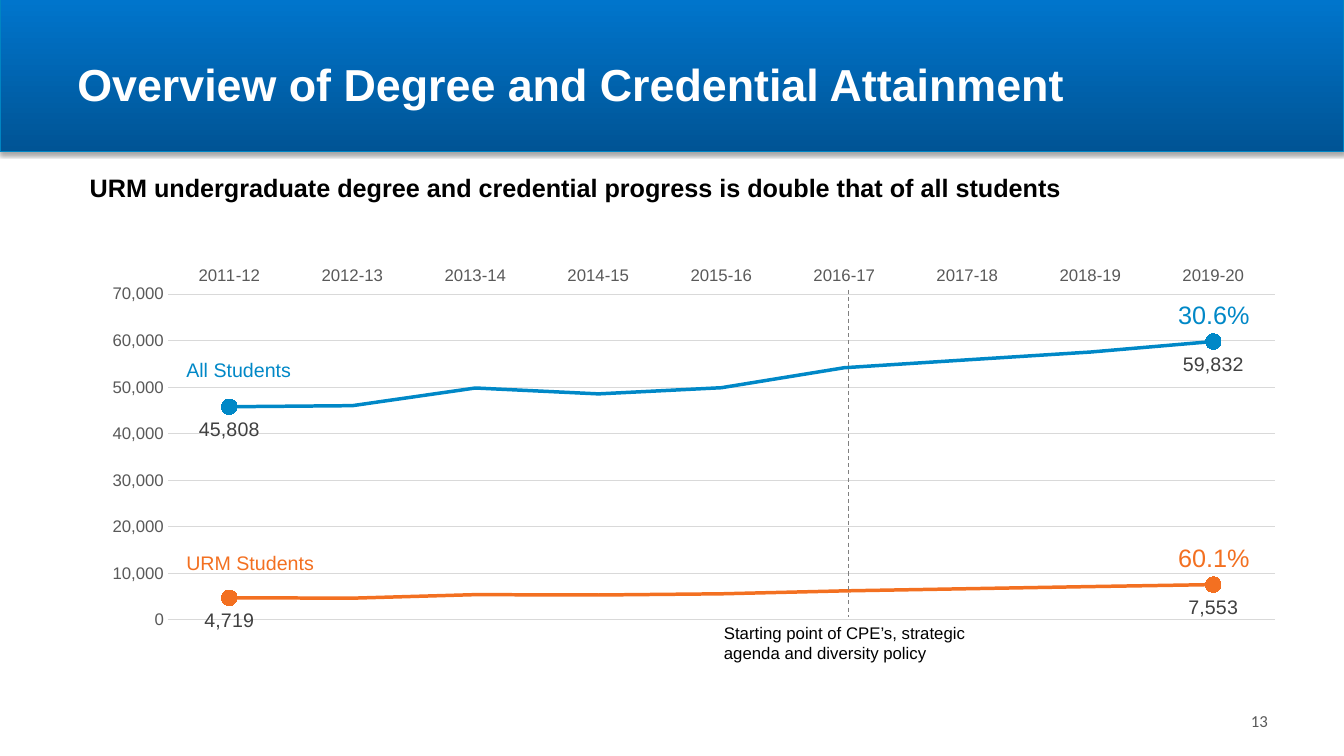
import lxml.etree
import pptx
import pptx.chart.data
import pptx.dml.color
import pptx.enum.chart
import pptx.enum.dml
import pptx.enum.shapes
import pptx.enum.text
import pptx.oxml
import pptx.oxml.ns
import pptx.util

PX = 9525  # EMU in one px, 96 px to the inch
THEME = {
    "font": "Arial", "number_font": "Calibri",
    "band_top": "0075CC", "band_bottom": "005495",
    "all": "0088C7", "urm": "F37021", "band_line": "0085C3",
    "white": "FFFFFF", "black": "000000", "axis": "595959",
    "label": "404040", "grid": "D9D9D9", "marker_line": "808080",
    "title": 32, "large": 18, "medium": 14, "small": 12, "chart": 10,
}
ALIGN = pptx.enum.text.PP_ALIGN
ANCHOR = pptx.enum.text.MSO_ANCHOR


def color(name):
    return pptx.dml.color.RGBColor.from_string(THEME[name])


def write(sp, box, text, size, ink, bold=False, align=ALIGN.LEFT,
          anchor=ANCHOR.TOP, font="font"):
    """Place a text shape and give it one formatted paragraph."""
    sp.left, sp.top, sp.width, sp.height = [v * PX for v in box]
    tf = sp.text_frame
    tf.word_wrap = True
    tf.auto_size = pptx.enum.text.MSO_AUTO_SIZE.NONE
    tf.vertical_anchor = anchor
    p = tf.paragraphs[0]
    p.text = text
    p.alignment = align
    p.font.name = THEME[font]
    p.font.size = pptx.util.Pt(THEME[size])
    p.font.bold = bold
    p.font.color.rgb = color(ink)


prs = pptx.Presentation()
prs.slide_width, prs.slide_height = 1280 * PX, 720 * PX
s = prs.slides.add_slide(prs.slide_layouts[5])

# Header band, behind the title
band = s.shapes.add_shape(pptx.enum.shapes.MSO_SHAPE.RECTANGLE,
                          0, 0, 1280 * PX, 144 * PX)
band.fill.gradient()
band.fill.gradient_angle = 90
for stop, name in zip(band.fill.gradient_stops, ("band_bottom", "band_top")):
    stop.color.rgb = color(name)
band.fill.gradient_stops[0].position = 0
band.fill.gradient_stops[1].position = 1
band.line.color.rgb = color("band_line")
band.line.width = pptx.util.Pt(0.75)
band.shadow.inherit = False
effects = band.element.spPr.find(pptx.oxml.ns.qn("a:effectLst"))
effects.append(pptx.oxml.parse_xml(
    f'<a:outerShdw {pptx.oxml.ns.nsdecls("a")} blurRad="39370" dist="22860" '
    'dir="5400000" rotWithShape="0"><a:srgbClr val="000000">'
    '<a:alpha val="35000"/></a:srgbClr></a:outerShdw>'))
s.shapes.title.element.addprevious(band.element)
write(s.shapes.title, (64, 16, 1152, 128),
      "Overview of Degree and Credential Attainment", "title", "white",
      bold=True, anchor=ANCHOR.MIDDLE)

# Line chart
data = pptx.chart.data.CategoryChartData(number_format="#,##0")
data.categories = [f"{year}-{year - 1999}" for year in range(2011, 2020)]
data.add_series("All Students", (45808, 46040, 49834, 48571, 49894,
                                 54195, 55890, 57566, 59832))
data.add_series("URM Students", (4719, 4636, 5401, 5318, 5577,
                                 6209, 6669, 7130, 7553))
chart = s.shapes.add_chart(pptx.enum.chart.XL_CHART_TYPE.LINE, 88 * PX, 192 * PX,
                           1141 * PX, 472 * PX, data).chart
chart.has_legend = False
chart.has_title = False
chart.font.name = THEME["font"]
chart.font.size = pptx.util.Pt(THEME["chart"])
chart.font.color.rgb = color("black")
chart.plots[0].vary_by_categories = False

years, values = chart.category_axis, chart.value_axis
for axis in (years, values):
    axis.major_tick_mark = axis.minor_tick_mark = pptx.enum.chart.XL_TICK_MARK.NONE
    axis.tick_labels.font.name = THEME["font"]
    axis.tick_labels.font.size = pptx.util.Pt(THEME["small"])
    axis.tick_labels.font.color.rgb = color("axis")
years.tick_label_position = pptx.enum.chart.XL_TICK_LABEL_POSITION.HIGH
values.minimum_scale, values.maximum_scale, values.major_unit = 0, 70000, 10000
values.tick_labels.number_format = "#,##0"
values.tick_labels.number_format_is_linked = False
values.format.line.fill.background()
for line in (years.format.line, values.major_gridlines.format.line):
    line.color.rgb = color("grid")
    line.width = pptx.util.Pt(0.75)

for series, name in zip(chart.plots[0].series, ("all", "urm")):
    series.smooth = False
    series.marker.style = pptx.enum.chart.XL_MARKER_STYLE.NONE
    series.data_labels.show_value = False
    first, last = series.points[0], series.points[8]
    for line in (series.format.line, first.format.line, last.format.line):
        line.color.rgb = color(name)
        line.width = pptx.util.Pt(2.5)
    for point in (first, last):
        point.marker.style = pptx.enum.chart.XL_MARKER_STYLE.CIRCLE
        point.marker.size = 11
        point.marker.format.fill.solid()
        point.marker.format.fill.fore_color.rgb = color(name)
        point.marker.format.line.color.rgb = color(name)
        label = point.data_label
        label.font.name = THEME["font"]
        label.font.size = pptx.util.Pt(THEME["medium"])
        label.font.color.rgb = color("label")
        label.position = pptx.enum.chart.XL_LABEL_POSITION.BELOW

plot_area = chart.plots[0]._element.getparent()
for old in plot_area.findall(pptx.oxml.ns.qn("c:layout")):
    plot_area.remove(old)
layout = lxml.etree.Element(pptx.oxml.ns.qn("c:layout"))
manual = lxml.etree.SubElement(layout, pptx.oxml.ns.qn("c:manualLayout"))
for tag, val in (("layoutTarget", "inner"), ("xMode", "edge"), ("yMode", "edge"),
                 ("x", "0.063"), ("y", "0.187"), ("w", "0.924"), ("h", "0.657")):
    lxml.etree.SubElement(manual, pptx.oxml.ns.qn(f"c:{tag}"), val=val)
plot_area.insert(0, layout)

# Dashed line at the starting year
start = s.shapes.add_connector(pptx.enum.shapes.MSO_CONNECTOR.STRAIGHT,
                               808 * PX, 276 * PX, 808 * PX, 588 * PX)
start.line.color.rgb = color("marker_line")
start.line.width = pptx.util.Pt(0.75)
start.line.dash_style = pptx.enum.dml.MSO_LINE.DASH
lxml.etree.SubElement(start.element.spPr, pptx.oxml.ns.qn("a:effectLst"))

# Text around the chart
for box, text, size, ink, options in (
    ((76, 159, 1133, 38),
     "URM undergraduate degree and credential progress is double that of all students",
     "large", "black", {"bold": True}),
    ((168, 336, 200, 33), "All Students", "medium", "all", {}),
    ((168, 520, 200, 33), "URM Students", "medium", "urm", {}),
    ((680, 588, 256, 48),
     "Starting point of CPE’s, strategic agenda and diversity policy",
     "small", "black", {}),
    ((1104, 280, 104, 38), "30.6%", "large", "all", {"align": ALIGN.CENTER}),
    ((1104, 512, 104, 38), "60.1%", "large", "urm", {"align": ALIGN.CENTER}),
    ((1163, 667, 54, 38), "13", "small", "axis",
     {"align": ALIGN.RIGHT, "anchor": ANCHOR.MIDDLE, "font": "number_font"}),
):
    write(s.shapes.add_textbox(0, 0, 0, 0), box, text, size, ink, **options)

prs.save("out.pptx")
